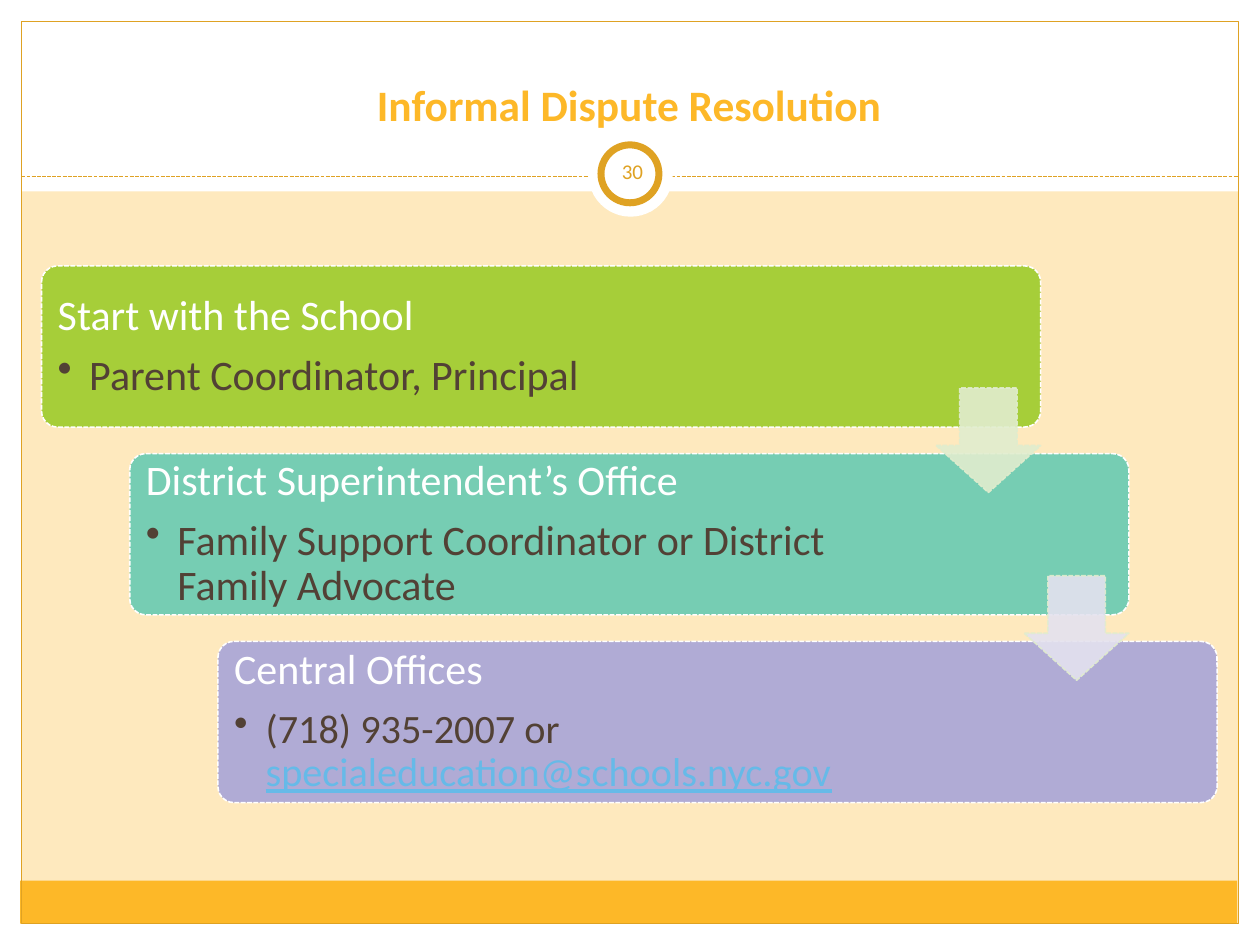
from lxml.etree import SubElement
from pptx import Presentation
from pptx.dml.color import RGBColor
from pptx.enum.dml import MSO_LINE
from pptx.enum.shapes import MSO_CONNECTOR, MSO_SHAPE
from pptx.enum.text import MSO_ANCHOR, PP_ALIGN
from pptx.oxml.ns import qn
from pptx.util import Inches, Pt

WHITE, GOLD, AMBER, BROWN, SKY = "FFFFFF", "DFA223", "FDB828", "524135", "66BAE8"

presentation = Presentation()
presentation.slide_width = Inches(10)
presentation.slide_height = Inches(7.5)
slide = presentation.slides.add_slide(presentation.slide_layouts[6])
slide.background.fill.solid()
slide.background.fill.fore_color.rgb = RGBColor.from_string("FEE9BE")


def add_shape(kind, left, top, width, height, fill=None, line=None, line_width=0.75, dashed=False):
    shape = slide.shapes.add_shape(kind, Inches(left), Inches(top), Inches(width), Inches(height))
    shape.shadow.inherit = False
    for paint, color in ((shape.fill, fill), (shape.line.fill, line)):
        if color:
            paint.solid()
            paint.fore_color.rgb = RGBColor.from_string(color)
        else:
            paint.background()
    if line:
        shape.line.width = Pt(line_width)
    if dashed:
        shape.line.dash_style = MSO_LINE.SQUARE_DOT
    return shape


def add_run(paragraph, text, size, color):
    run = paragraph.add_run()
    run.text = text
    run.font.name = "Calibri"
    run.font.size = Pt(size)
    run.font.color.rgb = RGBColor.from_string(color)
    return run


# White page margins, header band, footer bar and frame
for left, top, width, height, fill in (
    (0, 7.33, 10, 0.17, WHITE),
    (0, 0, 10, 1.52, WHITE),
    (0, 0, 0.17, 7.5, WHITE),
    (9.83, 0, 0.17, 7.5, WHITE),
    (0.16, 6.99, 9.66, 0.34, AMBER),
):
    add_shape(MSO_SHAPE.RECTANGLE, left, top, width, height, fill)
add_shape(MSO_SHAPE.RECTANGLE, 0.17, 0.17, 9.66, 7.16, line=GOLD)

divider = slide.shapes.add_connector(
    MSO_CONNECTOR.STRAIGHT, Inches(0.17), Inches(1.4), Inches(9.83), Inches(1.4))
divider.line.color.rgb = RGBColor.from_string(GOLD)
divider.line.width = Pt(0.75)
divider.line.dash_style = MSO_LINE.SQUARE_DOT
SubElement(divider._element.spPr, qn("a:effectLst"))

add_shape(MSO_SHAPE.OVAL, 4.67, 1.05, 0.67, 0.67, WHITE)
add_shape(MSO_SHAPE.OVAL, 4.77, 1.15, 0.46, 0.46, WHITE, GOLD, 4)

# Title and slide number
for text, left, top, width, height, size, color, anchor, bold in (
    ("Informal Dispute Resolution", 0.33, 0.25, 9.33, 0.83, 24.8, AMBER, MSO_ANCHOR.BOTTOM, True),
    ("30", 4.77, 1.12, 0.5, 0.48, 12, GOLD, MSO_ANCHOR.MIDDLE, False),
):
    box = slide.shapes.add_textbox(Inches(left), Inches(top), Inches(width), Inches(height))
    frame = box.text_frame
    frame.word_wrap = True
    frame.vertical_anchor = anchor
    frame.margin_left = frame.margin_right = Inches(0.05)
    frame.margin_top = frame.margin_bottom = Inches(0.05)
    frame.paragraphs[0].alignment = PP_ALIGN.CENTER
    add_run(frame.paragraphs[0], text, size, color).font.bold = bold

# Staircase of steps: each card is one step right and down from the last
CARD_LEFT, CARD_TOP, STEP_X, STEP_Y = 0.33, 2.11, 0.7, 1.49
steps = (
    ("A6CE39", 6.55, "Start with the School",
     (("Parent Coordinator, Principal", 24, BROWN),)),
    ("76CDB3", 6.33, "District Superintendent’s Office",
     (("Family Support Coordinator or District Family Advocate", 24, BROWN),)),
    ("B0ABD5", 6.33, "Central Offices",
     (("(718) 935-2007 or ", 23, BROWN), ("specialeducation@schools.nyc.gov", 23, SKY))),
)
for index, (fill, text_width, heading, details) in enumerate(steps):
    left, top = CARD_LEFT + index * STEP_X, CARD_TOP + index * STEP_Y
    card = add_shape(MSO_SHAPE.ROUNDED_RECTANGLE, left, top, 7.93, 1.28, fill, WHITE, 0.9, True)
    card.adjustments[0] = 0.1

    box = slide.shapes.add_textbox(
        Inches(left + 0.03), Inches(top + 0.04), Inches(text_width), Inches(1.2))
    frame = box.text_frame
    frame.word_wrap = True
    frame.vertical_anchor = MSO_ANCHOR.MIDDLE
    frame.margin_left = frame.margin_right = Inches(0.1)
    frame.margin_top = frame.margin_bottom = Inches(0.1)

    title = frame.paragraphs[0]
    title.line_spacing = 0.9
    title.space_after = Pt(8.4)
    add_run(title, heading, 24, WHITE)

    bullet = frame.add_paragraph()
    bullet.level = 1
    bullet.line_spacing = 0.9
    bullet.space_after = Pt(3.6)
    properties = bullet._p.get_or_add_pPr()
    properties.set("marL", str(Inches(0.25)))
    properties.set("indent", str(-Inches(0.25)))
    SubElement(properties, qn("a:buChar"), char="•")
    for text, size, color in details:
        add_run(bullet, text, size, color).font.underline = color == SKY

# Translucent arrows linking each card to the next
for index, fill in enumerate(("E1EDCE", "E4E2EF")):
    arrow = add_shape(MSO_SHAPE.DOWN_ARROW, 7.43 + index * STEP_X, 3.08 + index * STEP_Y,
                      0.83, 0.83, fill, "E1EDCE", 0.9, True)
    arrow.adjustments[0] = 0.55
    arrow.adjustments[1] = 0.45
    for color in arrow._element.spPr.iter(qn("a:srgbClr")):
        SubElement(color, qn("a:alpha"), val="90000")

presentation.save("out.pptx")
